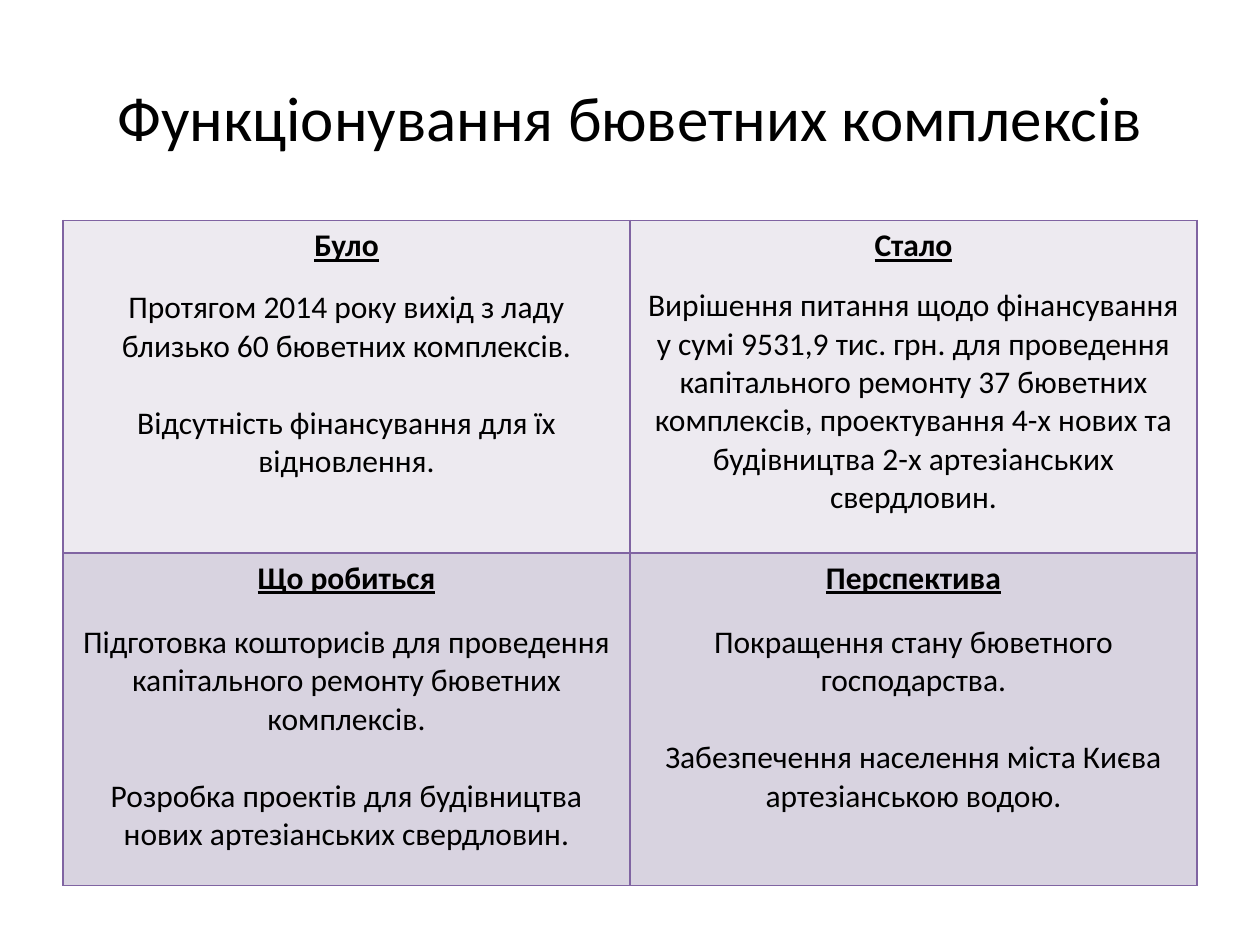
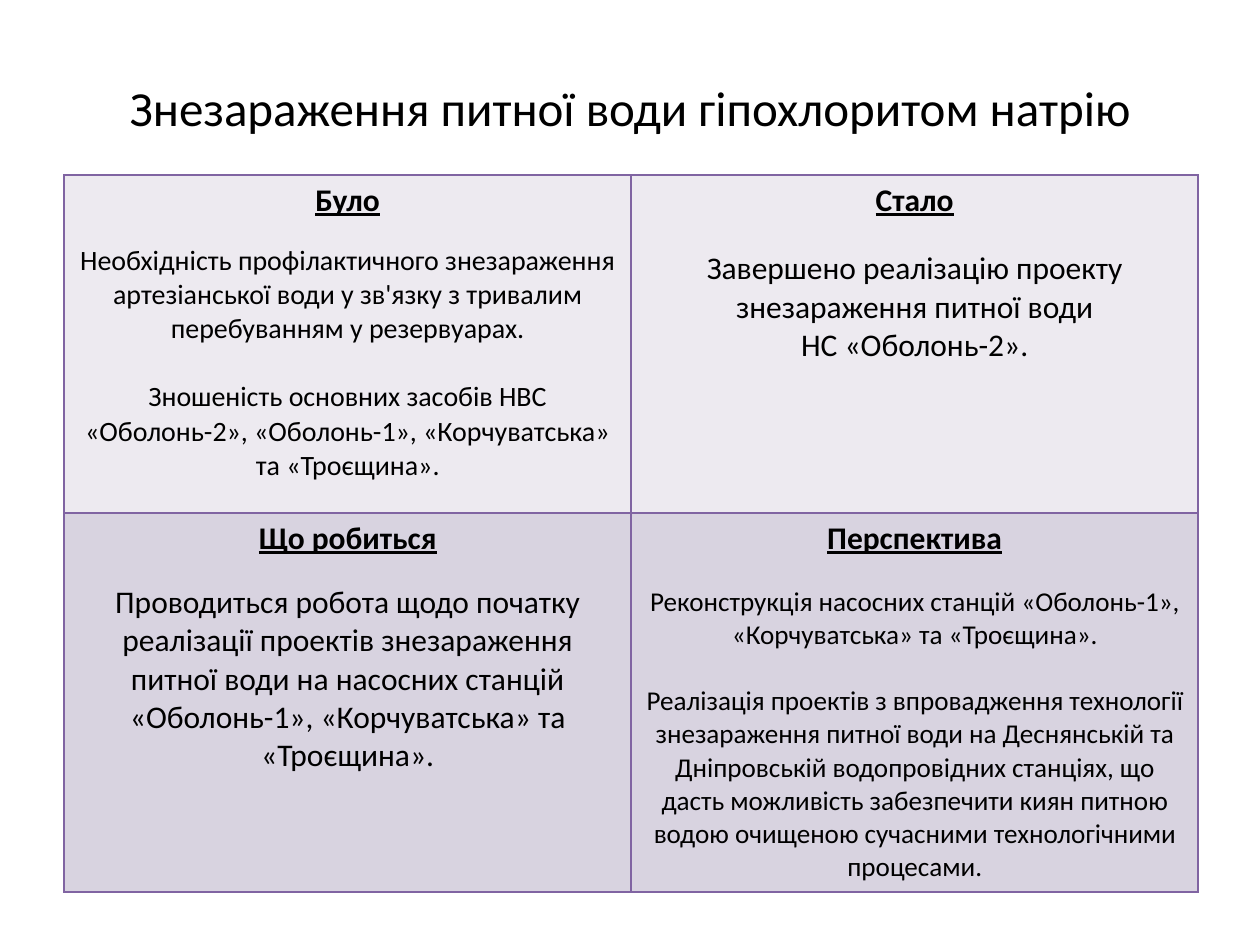
from dataclasses import dataclass

from lxml.etree import SubElement
from pptx import Presentation
from pptx.dml.color import RGBColor
from pptx.enum.text import MSO_ANCHOR, PP_ALIGN
from pptx.oxml.ns import qn
from pptx.util import Inches, Pt

COLORS = {
    "text": "000000",
    "border": "8064A2",
    "top_row": "EDEAF0",
    "bottom_row": "D8D3E0",
}
FONT = "Calibri"
LINE_HEIGHT = 1.22
MARGIN = 0.5
COLUMN_WIDTH = 4.5
HEADINGS = ("Було", "Стало", "Що робиться", "Перспектива")
ROW_FILLS = ("top_row", "bottom_row")


@dataclass
class Paragraph:
    text: str
    gap_lines_size: float = 0
    size: float = 18


@dataclass
class StatusSlide:
    title: str
    title_size: float
    title_height: float
    table_left: float
    table_top: float
    row_heights: tuple[float, float]
    quadrants: tuple[list[Paragraph], ...]


SLIDES = (
    StatusSlide(
        "Функціонування бюветних комплексів", 36, 1.25, 0.5, 1.75, (2.64, 2.64),
        (
            [
                Paragraph("Протягом 2014 року вихід з ладу близько 60 бюветних комплексів.", 11),
                Paragraph("Відсутність фінансування для їх відновлення.", 18),
            ],
            [
                Paragraph(
                    "Вирішення питання щодо фінансування у сумі 9531,9 тис. грн. для проведення "
                    "капітального ремонту 37 бюветних комплексів, проектування 4-х нових та "
                    "будівництва 2-х артезіанських свердловин.", 10),
            ],
            [
                Paragraph(
                    "Підготовка кошторисів для проведення капітального ремонту бюветних "
                    "комплексів.", 12),
                Paragraph("Розробка проектів для будівництва нових артезіанських свердловин.", 18),
            ],
            [
                Paragraph("Покращення стану бюветного господарства.", 12),
                Paragraph("Забезпечення населення міста Києва артезіанською водою.", 18),
            ],
        ),
    ),
    StatusSlide(
        "Знезараження питної води гіпохлоритом натрію", 28, 1.09, 0.51, 1.39, (2.68, 3.01),
        (
            [
                Paragraph(
                    "Необхідність профілактичного знезараження артезіанської води у зв'язку з "
                    "тривалим перебуванням у резервуарах.", 11, 16),
                Paragraph(
                    "Зношеність основних засобів НВС «Оболонь-2», «Оболонь-1», «Корчуватська» "
                    "та «Троєщина».", 16, 16),
            ],
            [
                Paragraph("Завершено реалізацію проекту знезараження питної води", 14),
                Paragraph("НС «Оболонь-2»."),
            ],
            [
                Paragraph(
                    "Проводиться робота щодо початку реалізації проектів знезараження питної "
                    "води на насосних станцій «Оболонь-1», «Корчуватська» та «Троєщина».", 12),
            ],
            [
                Paragraph(
                    "Реконструкція насосних станцій «Оболонь-1», «Корчуватська» та «Троєщина».",
                    13, 15.5),
                Paragraph(
                    "Реалізація проектів з впровадження технології знезараження питної води на "
                    "Деснянській та Дніпровській водопровідних станціях, що дасть можливість "
                    "забезпечити киян питною водою очищеною сучасними технологічними процесами.",
                    15.5, 15.5),
            ],
        ),
    ),
)


def write_text(paragraph, text: str, *, size: float, heading: bool = False,
               space_before: float = 0) -> None:
    paragraph.alignment = PP_ALIGN.CENTER
    paragraph.space_before = Pt(space_before)
    run = paragraph.add_run()
    run.text = text
    run.font.name = FONT
    run.font.size = Pt(size)
    run.font.bold = heading
    run.font.underline = heading
    run.font.color.rgb = RGBColor.from_string(COLORS["text"])


def draw_borders(cell) -> None:
    properties = cell._tc.get_or_add_tcPr()
    for index, side in enumerate(("lnL", "lnR", "lnT", "lnB")):
        line = SubElement(properties, qn(f"a:{side}"), w=str(Pt(1)))
        fill = SubElement(line, qn("a:solidFill"))
        SubElement(fill, qn("a:srgbClr"), val=COLORS["border"])
        properties.insert(index, line)


def fill_cell(cell, heading: str, paragraphs: list[Paragraph], color: str) -> None:
    cell.fill.solid()
    cell.fill.fore_color.rgb = RGBColor.from_string(COLORS[color])
    draw_borders(cell)
    frame = cell.text_frame
    write_text(frame.paragraphs[0], heading, size=18, heading=True)
    for item in paragraphs:
        write_text(frame.add_paragraph(), item.text, size=item.size,
                   space_before=round(item.gap_lines_size * LINE_HEIGHT, 1))


def add_title(slide, content: StatusSlide) -> None:
    title = slide.shapes.title
    title.left, title.top = Inches(MARGIN), Inches(0.3)
    title.width, title.height = Inches(2 * COLUMN_WIDTH), Inches(content.title_height)
    title.text_frame.vertical_anchor = MSO_ANCHOR.MIDDLE
    write_text(title.text_frame.paragraphs[0], content.title, size=content.title_size)


def add_status_table(slide, content: StatusSlide) -> None:
    table = slide.shapes.add_table(
        2, 2, Inches(content.table_left), Inches(content.table_top),
        Inches(2 * COLUMN_WIDTH), Inches(sum(content.row_heights))).table
    table.first_row = False
    table.horz_banding = False
    for column in table.columns:
        column.width = Inches(COLUMN_WIDTH)
    for row, height in zip(table.rows, content.row_heights):
        row.height = Inches(height)
    for index, (heading, paragraphs) in enumerate(zip(HEADINGS, content.quadrants)):
        row_index, column_index = divmod(index, 2)
        fill_cell(table.cell(row_index, column_index), heading, paragraphs, ROW_FILLS[row_index])


def main() -> None:
    presentation = Presentation()
    presentation.slide_width = Inches(10)
    presentation.slide_height = Inches(7.5)
    title_only = presentation.slide_layouts[5]
    for content in SLIDES:
        slide = presentation.slides.add_slide(title_only)
        add_title(slide, content)
        add_status_table(slide, content)
    presentation.save("out.pptx")


if __name__ == "__main__":
    main()
